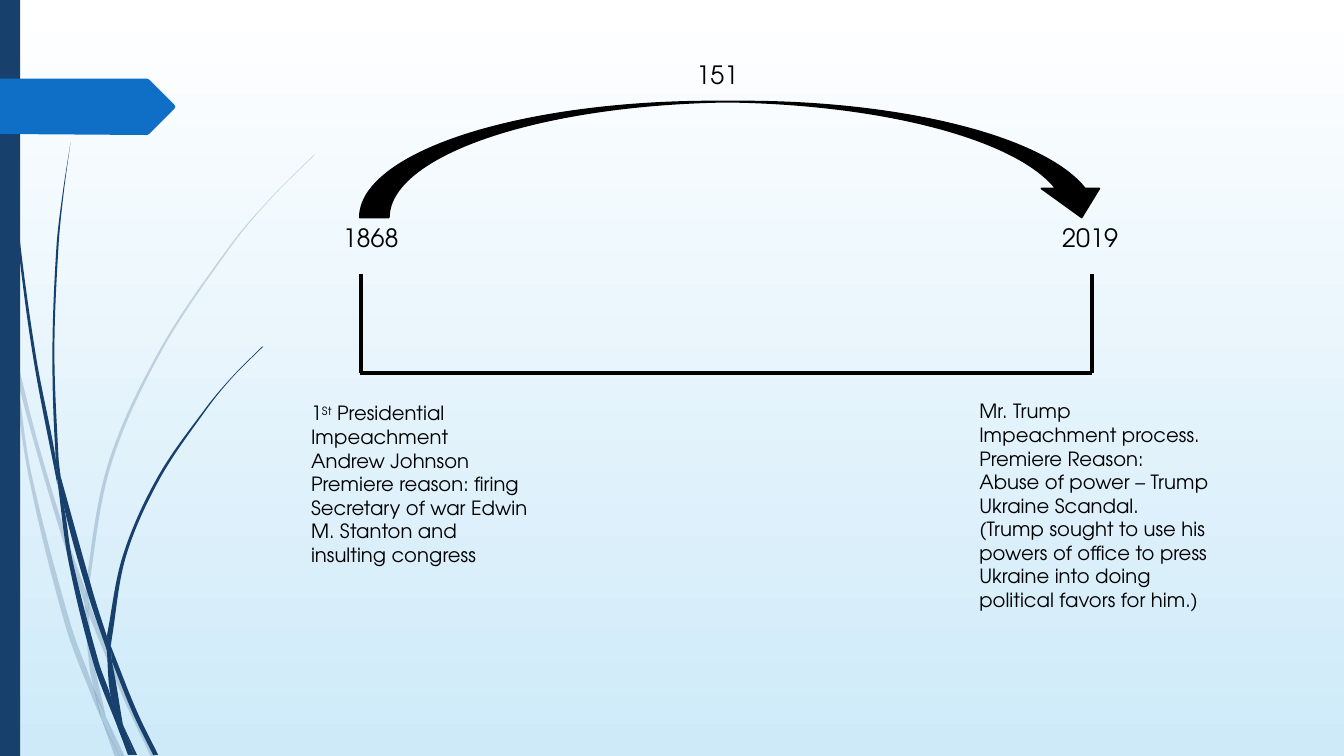
from dataclasses import dataclass
from math import dist

from lxml import etree
from pptx import Presentation
from pptx.dml.color import RGBColor
from pptx.enum.shapes import MSO_CONNECTOR, MSO_SHAPE
from pptx.oxml.ns import qn
from pptx.shapes.autoshape import Shape
from pptx.slide import Slide
from pptx.util import Cm, Pt

STRAIGHT = MSO_CONNECTOR.STRAIGHT
RECTANGLE = MSO_SHAPE.RECTANGLE
CURVED_DOWN_ARROW = MSO_SHAPE.CURVED_DOWN_ARROW

BLACK = RGBColor(0x00, 0x00, 0x00)
WHITE = RGBColor(0xFF, 0xFF, 0xFF)
SKY = RGBColor(0xCE, 0xEA, 0xF9)
NAVY = RGBColor(0x17, 0x40, 0x6D)
BLUE = RGBColor(0x0F, 0x6F, 0xC6)

FONT_NAME = "TeX Gyre Adventor"
GRID = Cm(2.54) / 100  # one step of the outline coordinates

Point = tuple[float, float]


@dataclass
class Blade:
    """A piece of grass: its two edges from tip to root."""
    left: list[Point]
    right: list[Point]


@dataclass
class Caption:
    left: float
    top: float
    width: float
    height: float
    size: int
    paragraphs: list[list[tuple[str, bool]]]  # (text, superscript)


PALE_GRASS = [
    Blade([(0, 299), (10, 344), (11, 350)], [(0, 282), (9, 322), (11, 350)]),
    Blade([(14, 345), (17, 376), (58, 522), (84, 599)], [(14, 345), (36, 433), (62, 520), (85, 586)]),
    Blade([(88, 610), (123, 694), (150, 751)], [(88, 596), (92, 607), (127, 692), (155, 751)]),
    Blade([(105, 711), (119, 751)], [(105, 711), (124, 751)]),
    Blade([(11, 350), (28, 470), (65, 621), (92, 693), (101, 714)],
          [(11, 350), (17, 376), (31, 469), (70, 619), (93, 683), (101, 714)]),
    Blade([(84, 599), (87, 646), (93, 683), (105, 711)], [(84, 599), (88, 610), (91, 646), (105, 711)]),
    Blade([(312, 153), (268, 197), (228, 244), (158, 348), (107, 461), (85, 584), (88, 596)],
          [(312, 154), (268, 198), (229, 245), (160, 349), (110, 462), (88, 584), (88, 596)]),
    Blade([(101, 714), (114, 751)], [(101, 714), (119, 751)]),
    Blade([(85, 586), (84, 599), (88, 610)], [(85, 586), (88, 596), (88, 610)]),
    Blade([(93, 683), (101, 714), (119, 751)], [(93, 683), (105, 711), (119, 751)]),
]
DARK_GRASS = [
    Blade([(3, 0), (7, 110), (17, 233), (33, 355), (57, 481)],
          [(4, 0), (8, 109), (19, 232), (36, 355), (55, 453), (57, 481)]),
    Blade([(60, 472), (64, 505), (88, 592), (106, 645)], [(60, 472), (93, 590), (106, 631)]),
    Blade([(111, 656), (132, 708), (152, 749)], [(110, 641), (136, 706), (157, 749)]),
    Blade([(57, 477), (68, 557), (93, 659), (117, 722)],
          [(57, 477), (64, 505), (72, 556), (98, 657), (110, 691), (117, 722)]),
    Blade([(70, 141), (62, 193), (56, 245), (52, 349), (55, 449), (60, 472)],
          [(70, 141), (63, 193), (58, 245), (54, 349), (58, 453), (60, 472)]),
    Blade([(122, 719), (133, 749)], [(122, 719), (136, 749)]),
    Blade([(55, 449), (57, 477), (64, 505)], [(55, 449), (60, 472), (64, 505)]),
    Blade([(260, 344), (231, 373), (204, 405), (156, 474), (122, 551), (106, 631)],
          [(261, 344), (231, 374), (205, 406), (158, 476), (125, 552), (111, 633), (110, 641)]),
    Blade([(117, 722), (127, 749)], [(117, 722), (131, 749)]),
    Blade([(106, 645), (110, 691), (122, 719)], [(106, 645), (111, 656), (122, 719)]),
    Blade([(106, 631), (106, 645), (111, 656)], [(106, 631), (110, 641), (111, 656)]),
    Blade([(110, 691), (117, 722), (130, 749)], [(110, 691), (122, 719), (133, 749)]),
]
BANNER = [(0, 78), (146, 78), (148, 79), (173, 104), (174, 106), (173, 108),
          (148, 133), (146, 134), (0, 133)]

CAPTIONS = [
    Caption(8.39, 5.49, 2.01, 1.02, 18, [[("1868", False)]]),
    Caption(26.52, 5.49, 2.01, 1.02, 18, [[("2019", False)]]),
    Caption(17.3, 1.37, 2.01, 1.02, 18, [[("151", False)]]),
    Caption(7.59, 9.99, 6.12, 4.7, 14, [
        [("1", False), ("St", True), (" Presidential Impeachment", False)],
        [("Andrew Johnson", False)],
        [("Premiere reason: firing Secretary of war Edwin M. Stanton "
          "and insulting congress", False)],
    ]),
    Caption(24.43, 9.94, 6.32, 5.92, 14, [
        [("Mr. Trump Impeachment process.", False)],
        [("Premiere Reason:", False)],
        [("Abuse of power – Trump Ukraine Scandal.", False)],
        [("(Trump sought to use his powers of office to press Ukraine "
          "into doing political favors for him.)", False)],
    ]),
]

BRACKET_LEFT, BRACKET_RIGHT, BRACKET_TOP, BRACKET_BOTTOM = 9.09, 27.51, 6.9, 9.4
BRACKET = [
    (9.07, BRACKET_BOTTOM, BRACKET_RIGHT, BRACKET_BOTTOM),
    (BRACKET_RIGHT, BRACKET_TOP, BRACKET_RIGHT, BRACKET_BOTTOM),
    (BRACKET_LEFT, BRACKET_TOP, BRACKET_LEFT, BRACKET_BOTTOM),
]


def handle(knot: Point, before: Point, after: Point, reach: float) -> Point:
    """Control point at a signed distance from a knot, along its tangent."""
    ratio = reach / dist(before, after)
    return (knot[0] + (after[0] - before[0]) * ratio,
            knot[1] + (after[1] - before[1]) * ratio)


def curve_through(knots: list[Point]) -> list[Point]:
    """Bezier control points of a smooth curve after its first knot."""
    padded = [knots[0], *knots, knots[-1]]
    controls = []
    for a, b, c, d in zip(padded, padded[1:], padded[2:], padded[3:]):
        third = dist(b, c) / 3
        controls += [handle(b, a, c, third), handle(c, b, d, -third), c]
    return controls


def paint(shape: Shape, color: RGBColor, opacity: int = 100) -> None:
    shape.shadow.inherit = False
    shape.line.fill.background()
    shape.fill.solid()
    shape.fill.fore_color.rgb = color
    if opacity < 100:
        tint = shape._element.spPr.find(qn("a:solidFill"))[0]
        etree.SubElement(tint, qn("a:alpha")).set("val", str(opacity * 1000))


def add_outline(slide: Slide, points: list[Point]) -> Shape:
    start, *rest = [(round(x * GRID), round(y * GRID)) for x, y in points]
    builder = slide.shapes.build_freeform(*start, scale=1.0)
    builder.add_line_segments(rest, close=True)
    return builder.convert_to_shape()


def add_blade(slide: Slide, blade: Blade, opacity: int) -> None:
    points = [blade.left[0], *curve_through(blade.left)]
    if blade.left[-1] != blade.right[-1]:
        points += curve_through([blade.left[-1], blade.right[-1]])
    shape = add_outline(slide, points + curve_through(blade.right[::-1]))
    lines = list(shape._element.spPr.iter(qn("a:lnTo")))
    for first, second, third in zip(lines[::3], lines[1::3], lines[2::3]):
        curve = etree.Element(qn("a:cubicBezTo"))
        first.addprevious(curve)
        for line in (first, second, third):
            curve.append(line[0])
            line.getparent().remove(line)
    paint(shape, NAVY, opacity)


def add_preset(slide: Slide, preset: MSO_SHAPE, left: float, top: float,
               width: float, height: float, color: RGBColor) -> Shape:
    shape = slide.shapes.add_shape(preset, Cm(left), Cm(top), Cm(width), Cm(height))
    paint(shape, color)
    return shape


def add_bracket_side(slide: Slide, ends: tuple[float, float, float, float]) -> None:
    side = slide.shapes.add_connector(STRAIGHT, *(Cm(end) for end in ends))
    side.line.color.rgb = BLACK
    side.line.width = Pt(3)
    etree.SubElement(side._element.spPr, qn("a:effectLst"))


def add_caption(slide: Slide, caption: Caption) -> None:
    frame = slide.shapes.add_textbox(Cm(caption.left), Cm(caption.top),
                                     Cm(caption.width), Cm(caption.height)).text_frame
    frame.word_wrap = True
    font_format = {"name": FONT_NAME, "size": Pt(caption.size)}
    for index, pieces in enumerate(caption.paragraphs):
        paragraph = frame.add_paragraph() if index else frame.paragraphs[0]
        for text, superscript in pieces:
            run = paragraph.add_run()
            run.text = text
            for attribute, value in font_format.items():
                setattr(run.font, attribute, value)
            run.font.color.rgb = BLACK
            if superscript:
                run._r.get_or_add_rPr().set("baseline", "30000")


def main() -> None:
    deck = Presentation()
    deck.slide_width, deck.slide_height = Cm(33.87), Cm(19.05)
    slide = deck.slides.add_slide(deck.slide_layouts[6])
    backdrop = slide.background.fill
    backdrop.gradient()
    backdrop.gradient_angle = 270
    for stop, color in zip(backdrop.gradient_stops, (WHITE, SKY)):
        stop.color.rgb = color
    for grass, opacity in ((PALE_GRASS, 20), (DARK_GRASS, 100)):
        for blade in grass:
            add_blade(slide, blade, opacity)
    add_preset(slide, RECTANGLE, 0, 0, 0.51, 19.05, NAVY)
    paint(add_outline(slide, BANNER), BLUE)
    for ends in BRACKET:
        add_bracket_side(slide, ends)
    span_arrow = add_preset(slide, CURVED_DOWN_ARROW, 9.07, 2.56, 18.92, 2.92, BLACK)
    span_arrow.line.color.rgb = BLACK
    span_arrow.line.width = Pt(1.25)
    for caption in CAPTIONS:
        add_caption(slide, caption)
    deck.save("out.pptx")


if __name__ == "__main__":
    main()
